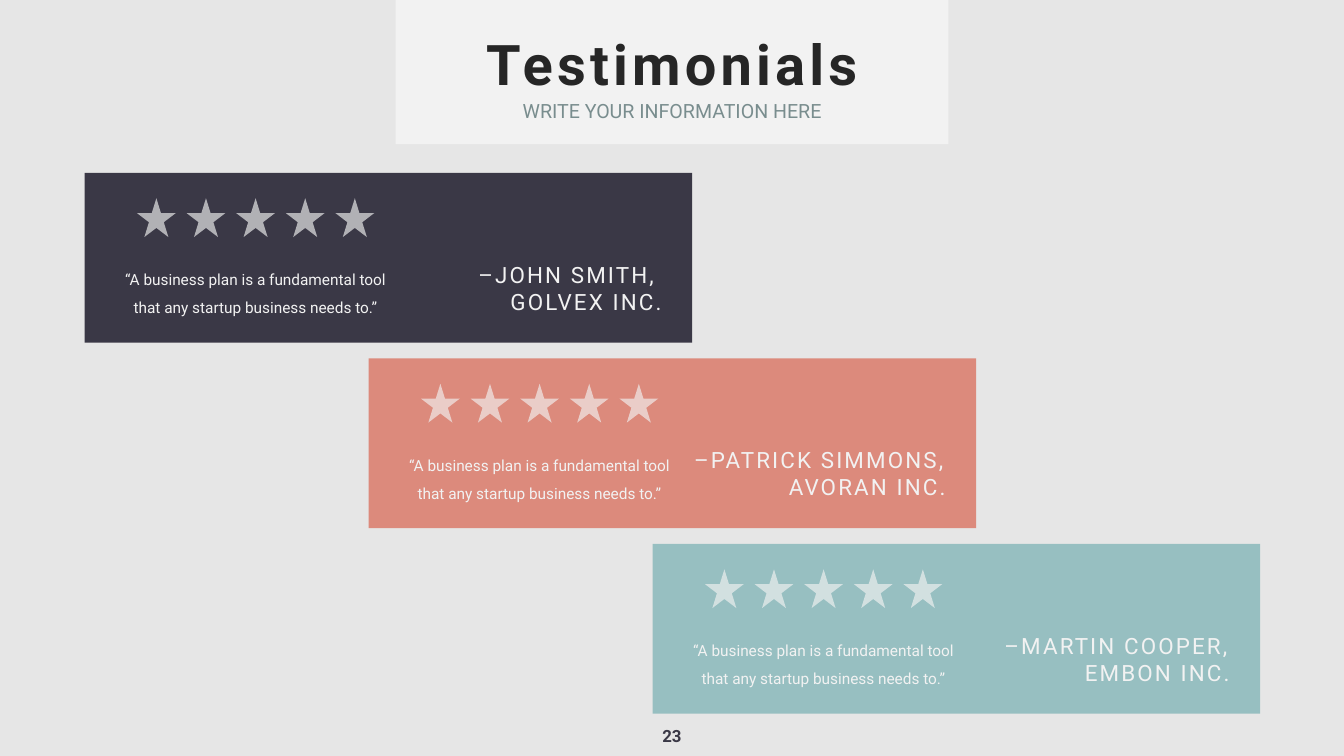
import pptx
import pptx.dml.color
import pptx.enum.shapes
import pptx.enum.text
import pptx.oxml.ns
import pptx.util
from lxml import etree

Cm = pptx.util.Cm
Pt = pptx.util.Pt
RGBColor = pptx.dml.color.RGBColor
Align = pptx.enum.text.PP_ALIGN
Anchor = pptx.enum.text.MSO_ANCHOR
Shape = pptx.enum.shapes.MSO_SHAPE
qn = pptx.oxml.ns.qn

BACKGROUND = RGBColor(0xE6, 0xE6, 0xE6)
PALE = RGBColor(0xF2, 0xF2, 0xF2)
INK = RGBColor(0x26, 0x26, 0x26)
SLATE = RGBColor(0x79, 0x8D, 0x8E)
NAVY = RGBColor(0x3A, 0x38, 0x46)
CORAL = RGBColor(0xDC, 0x8A, 0x7C)
TEAL = RGBColor(0x97, 0xBF, 0xC1)

SLIDE_WIDTH, SLIDE_HEIGHT = 67.72, 38.1
CARD_WIDTH, CARD_HEIGHT = 30.61, 8.56
CARD_LEFT, CARD_TOP = 4.27, 8.71
CARD_STEP_X, CARD_STEP_Y = 14.31, 9.35
STAR_COUNT, STAR_SIZE, STAR_STEP = 5, 1.96, 2.5

QUOTE = "“A business plan is a fundamental tool that any startup business needs to.”"
# author, company, card colour, width of the author text
TESTIMONIALS = [
    ("–JOHN SMITH, ", "GOLVEX INC.", NAVY, 11.61),
    ("–PATRICK SIMMONS, ", "AVORAN INC.", CORAL, 13.34),
    ("–MARTIN COOPER, ", "EMBON INC.", TEAL, 11.91),
]


class TestimonialSlide:
    def __init__(self, slide, font_name):
        self.slide = slide
        self.font_name = font_name
        slide.background.fill.solid()
        slide.background.fill.fore_color.rgb = BACKGROUND

    def block(self, preset, left, top, width, height, color, opacity=100):
        block = self.slide.shapes.add_shape(
            preset, Cm(left), Cm(top), Cm(width), Cm(height))
        block.shadow.inherit = False
        block.fill.solid()
        block.fill.fore_color.rgb = color
        block.line.fill.background()
        if opacity < 100:
            tint = block._element.spPr.find(qn("a:solidFill")).find(qn("a:srgbClr"))
            etree.SubElement(tint, qn("a:alpha"), val=str(opacity * 1000))
        return block

    def set_text(self, holder, lines, size, color, align=Align.CENTER, bold=False,
                 tracking=0, leading=None, after=0, anchor=Anchor.TOP, wrap=True):
        """Fill a text box or placeholder; tracking is letter spacing in points."""
        frame = holder.text_frame
        frame.text = "\n".join(lines)
        frame.word_wrap = wrap
        frame.vertical_anchor = anchor
        frame.auto_size = pptx.enum.text.MSO_AUTO_SIZE.SHAPE_TO_FIT_TEXT
        for paragraph in frame.paragraphs:
            paragraph.alignment = align
            paragraph.space_before = Pt(0)
            paragraph.space_after = Pt(after)
            if leading:
                paragraph.line_spacing = Pt(leading)
            font = paragraph.font
            font.name = self.font_name
            font.size = Pt(size)
            font.bold = bold
            font.color.rgb = color
            if tracking:
                font._element.set("spc", str(tracking * 100))

    def text(self, left, top, width, height, lines, size, color, **style):
        box = self.slide.shapes.add_textbox(Cm(left), Cm(top), Cm(width), Cm(height))
        self.set_text(box, lines, size, color, **style)

    def placeholder(self, index, top, width, height, line, size, color, **style):
        """Move a template placeholder to the slide's centre line and fill it."""
        holder = self.slide.placeholders[index]
        holder.left, holder.top = Cm((SLIDE_WIDTH - width) / 2), Cm(top)
        holder.width, holder.height = Cm(width), Cm(height)
        self.set_text(holder, [line], size, color, wrap=False, **style)

    def header(self, title, subtitle):
        width = 27.86
        banner = self.block(Shape.RECTANGLE, (SLIDE_WIDTH - width) / 2, 0,
                            width, 7.26, PALE)
        self.slide.shapes._spTree.insert(2, banner._element)  # behind the title
        self.placeholder(0, 1.32, 19.63, 3.68, title, 80, INK, bold=True,
                         tracking=6, anchor=Anchor.BOTTOM)
        self.placeholder(1, 4.65, 15.8, 1.57, subtitle, 28, SLATE,
                         leading=40, after=12)

    def testimonial(self, left, top, author, company, color, author_width):
        self.block(Shape.RECTANGLE, left, top, CARD_WIDTH, CARD_HEIGHT, color)
        for star in range(STAR_COUNT):
            self.block(Shape.STAR_5_POINT, left + 2.63 + star * STAR_STEP, top + 1.28,
                       STAR_SIZE, STAR_SIZE, PALE, opacity=65)
        self.text(left + 1.25, top + 4.32, 14.71, 2.95, [QUOTE], 22, PALE,
                  leading=40, after=18)
        self.text(left + 29.32 - author_width, top + 4.32, author_width, 3,
                  [author, company], 32, PALE, align=Align.RIGHT, tracking=3)

    def page_number(self, number):
        width = 1.57
        self.text((SLIDE_WIDTH - width) / 2, 36.45, width, 1.27, [str(number)], 24,
                  NAVY, bold=True, anchor=Anchor.MIDDLE, wrap=False)


def main():
    deck = pptx.Presentation()
    deck.slide_width, deck.slide_height = Cm(SLIDE_WIDTH), Cm(SLIDE_HEIGHT)
    page = TestimonialSlide(deck.slides.add_slide(deck.slide_layouts[0]), "Roboto")
    page.header("Testimonials", "WRITE YOUR INFORMATION HERE")
    for step, details in enumerate(TESTIMONIALS):
        page.testimonial(CARD_LEFT + step * CARD_STEP_X,
                         CARD_TOP + step * CARD_STEP_Y, *details)
    page.page_number(23)
    deck.save("out.pptx")


if __name__ == "__main__":
    main()
